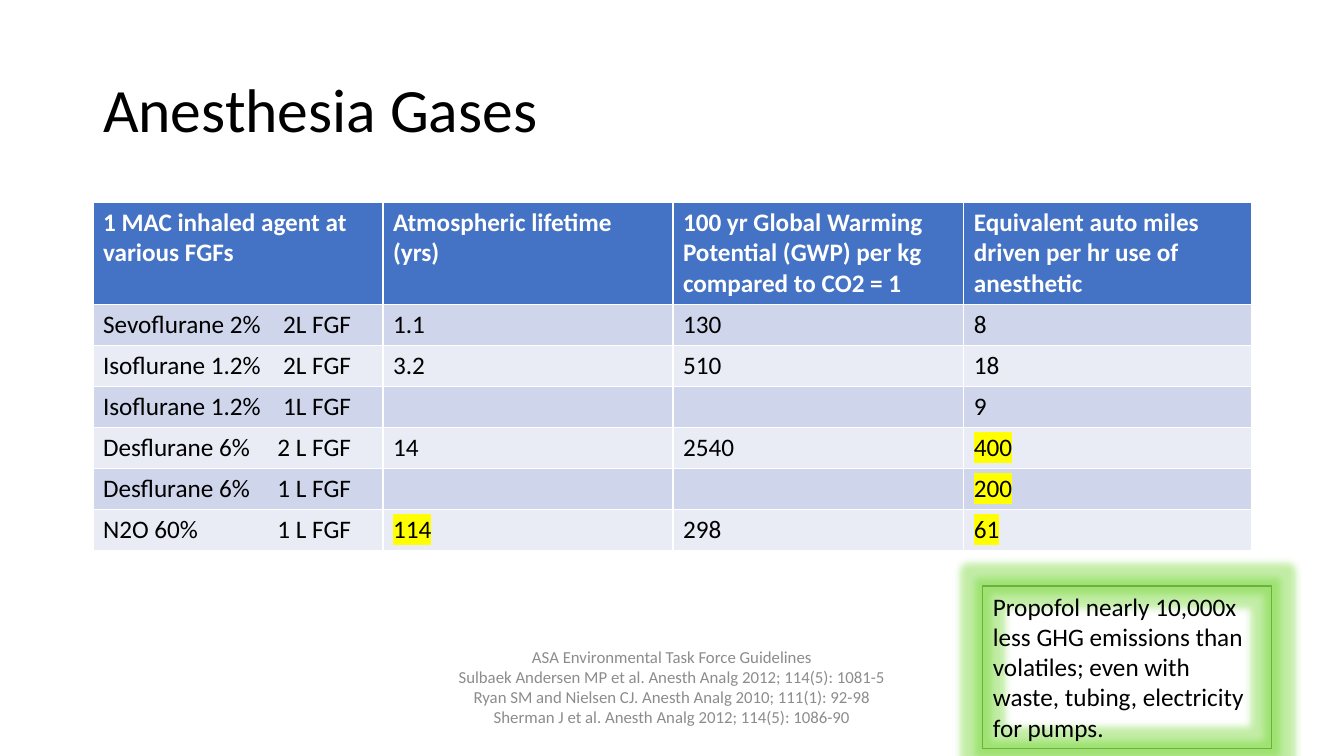
from lxml.etree import SubElement
from pptx import Presentation
from pptx.dml.color import RGBColor
from pptx.enum.shapes import MSO_SHAPE
from pptx.enum.text import MSO_ANCHOR, MSO_AUTO_SIZE, PP_ALIGN
from pptx.oxml.ns import qn
from pptx.util import Emu, Pt

SLIDE_WIDTH, SLIDE_HEIGHT = 1344, 756
SCALE = 12192000 / SLIDE_WIDTH
FONT = "Calibri"
BLACK, WHITE, GREEN, YELLOW = "000000", "FFFFFF", "70AD47", "FFFF00"


def px(*lengths):
    return [Emu(round(length * SCALE)) for length in lengths]


def write(para, text, size=18, color=BLACK, bold=False, align=PP_ALIGN.LEFT, highlight=None):
    para.alignment = align
    span = para.add_run()
    span.text = text
    span.font.size = Pt(size)
    span.font.bold = bold
    span.font.color.rgb = RGBColor.from_string(color)
    if highlight:
        marker = SubElement(span.font._element, qn("a:highlight"))
        SubElement(marker, qn("a:srgbClr"), val=highlight)
    span.font.name = FONT


deck = Presentation()
deck.slide_width, deck.slide_height = px(SLIDE_WIDTH, SLIDE_HEIGHT)
page = deck.slides.add_slide(deck.slide_layouts[5])

# Title
title = page.shapes.title
title.left, title.top, title.width, title.height = px(93, 40, 1159, 146)
title.text_frame.vertical_anchor = MSO_ANCHOR.MIDDLE
title.text_frame.auto_size = MSO_AUTO_SIZE.NONE
title.text_frame.paragraphs[0].line_spacing = 0.9
write(title.text_frame.paragraphs[0], "Anesthesia Gases", size=44)

# Table of gases; the gas flow in the first column sits on a right tab
rows = [
    ["1 MAC inhaled agent at various FGFs", "Atmospheric lifetime (yrs)",
     "100 yr Global Warming Potential (GWP) per kg compared to CO2 = 1",
     "Equivalent auto miles driven per hr use of anesthetic"],
    ["Sevoflurane 2%\t2L FGF", "1.1", "130", "8"],
    ["Isoflurane 1.2%\t2L FGF", "3.2", "510", "18"],
    ["Isoflurane 1.2%\t1L FGF", "", "", "9"],
    ["Desflurane 6%\t2 L FGF", "14", "2540", "400"],
    ["Desflurane 6%\t1 L FGF", "", "", "200"],
    ["N2O 60%\t1 L FGF", "114", "298", "61"],
]
highlighted = {"400", "200", "114", "61"}
column_widths = px(290, 290, 291, 288)
header_height, row_height, flow_tab = px(101, 41, 248)

table = page.shapes.add_table(len(rows), len(column_widths), *px(93, 202, 1159, 347)).table
for column, width in zip(table.columns, column_widths):
    column.width = width
for row_index, values in enumerate(rows):
    is_header = row_index == 0
    table.rows[row_index].height = header_height if is_header else row_height
    fill = "4472C4" if is_header else ("E9EBF5", "CFD5EA")[row_index % 2]
    for column_index, value in enumerate(values):
        cell = table.cell(row_index, column_index)
        cell.fill.solid()
        cell.fill.fore_color.rgb = RGBColor.from_string(fill)
        if not value:
            continue
        para = cell.text_frame.paragraphs[0]
        write(para, value, color=WHITE if is_header else BLACK, bold=is_header,
              highlight=YELLOW if value in highlighted else None)
        if "\t" in value:
            tabs = SubElement(para._p.get_or_add_pPr(), qn("a:tabLst"))
            SubElement(tabs, qn("a:tab"), pos=str(flow_tab), algn="r")

# References
references = [
    "ASA Environmental Task Force Guidelines",
    "Sulbaek Andersen MP et al. Anesth Analg 2012; 114(5): 1081-5",
    "Ryan SM and Nielsen CJ. Anesth Analg 2010; 111(1): 92-98",
    "Sherman J et al. Anesth Analg 2012; 114(5): 1086-90",
]
frame = page.shapes.add_textbox(*px(445, 633, 454, 108)).text_frame
frame.word_wrap = True
frame.vertical_anchor = MSO_ANCHOR.MIDDLE
for index, reference in enumerate(references):
    para = frame.add_paragraph() if index else frame.paragraphs[0]
    write(para, reference, size=12, color="8C8C8C", align=PP_ALIGN.CENTER)

# Propofol note with a green glow
note = page.shapes.add_shape(MSO_SHAPE.RECTANGLE, *px(983, 586, 289, 163))
note.shadow.inherit = False
note.fill.background()
note.line.color.rgb = RGBColor.from_string(GREEN)
note.line.width = Pt(0.75)
glow = SubElement(note._element.spPr.find(qn("a:effectLst")), qn("a:glow"), rad=str(Pt(11)))
glow_color = SubElement(glow, qn("a:srgbClr"), val=GREEN)
SubElement(glow_color, qn("a:satMod"), val="175000")
SubElement(glow_color, qn("a:alpha"), val="40000")
note.text_frame.word_wrap = True
note.text_frame.auto_size = MSO_AUTO_SIZE.SHAPE_TO_FIT_TEXT
note.text_frame.vertical_anchor = MSO_ANCHOR.TOP
write(note.text_frame.paragraphs[0],
      "Propofol nearly 10,000x less GHG emissions than volatiles; "
      "even with waste, tubing, electricity for pumps.")

deck.save("out.pptx")
